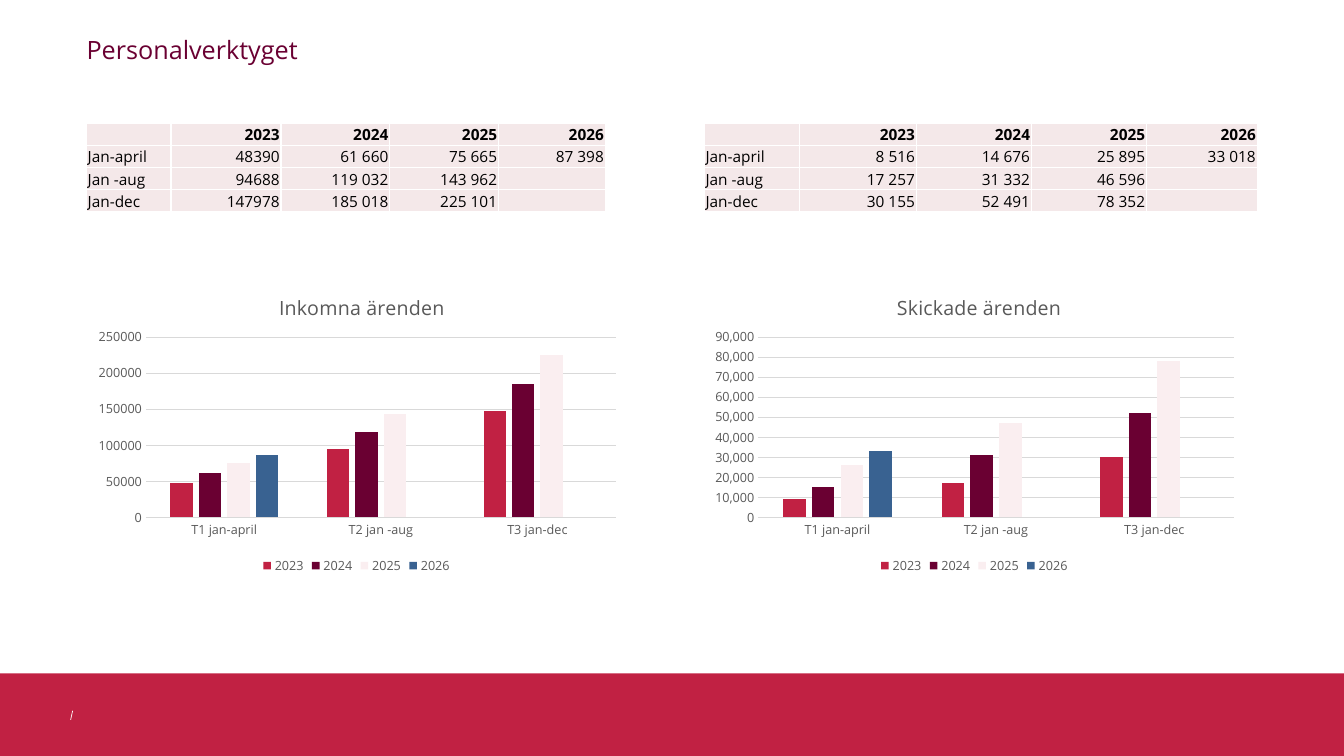
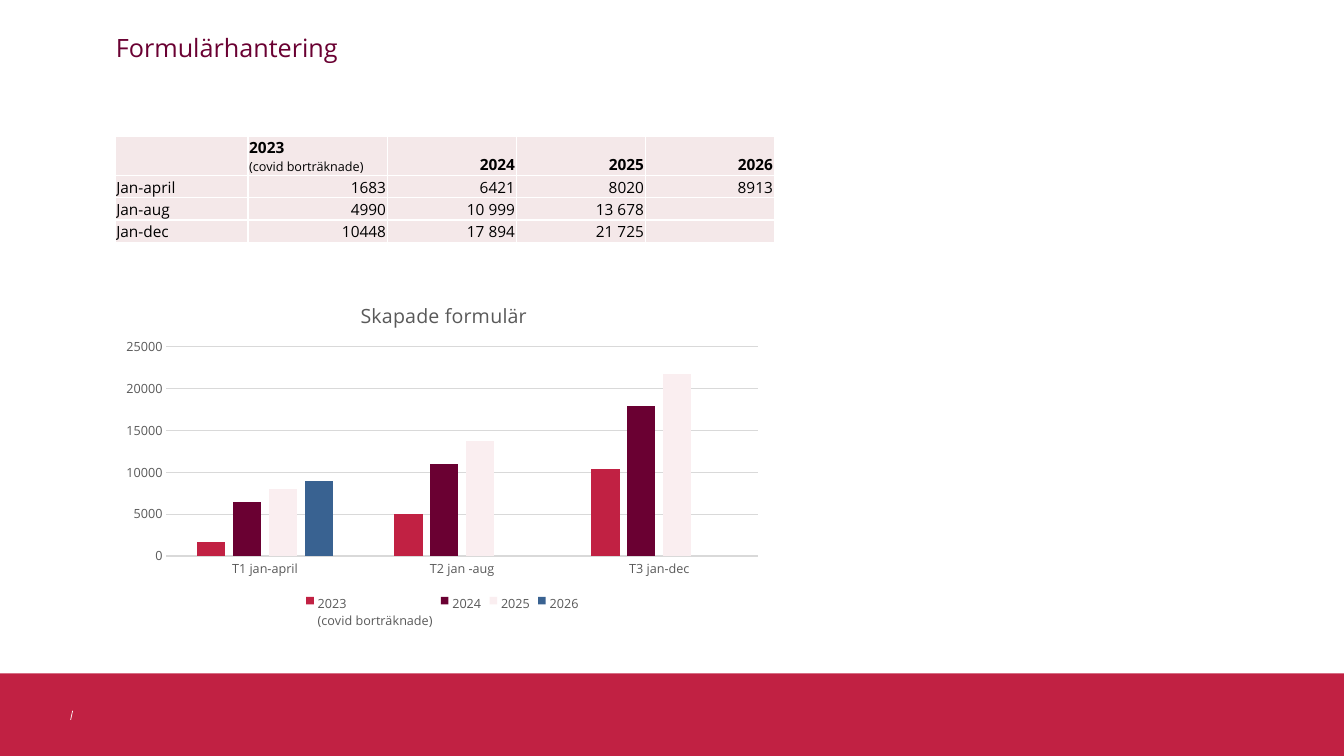
from dataclasses import dataclass

from pptx import Presentation
from pptx.chart.data import CategoryChartData
from pptx.dml.color import RGBColor
from pptx.enum import chart as chart_enum, shapes, text
from pptx.oxml import parse_xml
from pptx.oxml.ns import nsdecls, qn
from pptx.util import Cm, Pt

RED = RGBColor(0xC1, 0x21, 0x43)
WINE = RGBColor(0x6A, 0x00, 0x32)
BLUSH = RGBColor(0xFA, 0xEE, 0xF0)
BLUE = RGBColor(0x39, 0x62, 0x91)
CELL_PINK = RGBColor(0xF4, 0xE8, 0xE9)
GRID_GREY = RGBColor(0xD9, 0xD9, 0xD9)
TEXT_GREY = RGBColor(0x59, 0x59, 0x59)
BLACK = RGBColor(0, 0, 0)
WHITE = RGBColor(0xFF, 0xFF, 0xFF)

FONT = "Open Sans"
SLIDE_WIDTH, SLIDE_HEIGHT = Cm(33.87), Cm(19.05)
BAND_TOP = Cm(16.97)
ROW_HEIGHT = Cm(0.51)
YEARS = ["2023", "2024", "2025", "2026"]
COVID_NOTE = "(covid borträknade)"
COVID_YEARS = [f"2023\n{COVID_NOTE}", *YEARS[1:]]
SERIES_COLORS = [RED, WINE, BLUSH, BLUE]
PERIODS = ["T1 jan-april", "T2 jan -aug", "T3 jan-dec"]


@dataclass
class ChartLayout:
    """Title corner and plot area as shares of the chart's size."""
    title: tuple
    plot: tuple


def style_font(font, size, color, bold=False):
    font.name = FONT
    font.size = Pt(size)
    font.bold = bold
    font.color.rgb = color


def add_run(paragraph, words, size, color, bold=False):
    run = paragraph.add_run()
    run.text = words
    style_font(run.font, size, color, bold)


def add_footer_band(slide, layout):
    """Draw the band and its slash, then move them to the shared layout."""
    band = slide.shapes.add_shape(shapes.MSO_SHAPE.RECTANGLE, 0, BAND_TOP,
                                  SLIDE_WIDTH, SLIDE_HEIGHT - BAND_TOP)
    band.shadow.inherit = False
    band.fill.solid()
    band.fill.fore_color.rgb = RED
    band.line.fill.background()
    slash = slide.shapes.add_connector(shapes.MSO_CONNECTOR.STRAIGHT,
                                       Cm(1.83), Cm(17.91), Cm(1.78), Cm(18.14))
    slash.line.color.rgb = WHITE
    slash.line.width = Pt(0.5)
    slash.element.spPr.append(parse_xml(f"<a:effectLst {nsdecls('a')}/>"))
    for shape in (band, slash):
        layout.shapes.element.append(shape.element)


def set_title(slide, words, left, top, width, height):
    title = slide.shapes.title
    title.left, title.top, title.width, title.height = left, top, width, height
    frame = title.text_frame
    frame.margin_left = frame.margin_top = frame.margin_right = frame.margin_bottom = 0
    frame.vertical_anchor = text.MSO_ANCHOR.TOP
    frame.auto_size = text.MSO_AUTO_SIZE.NONE
    frame.word_wrap = True
    paragraph = frame.paragraphs[0]
    paragraph.alignment = text.PP_ALIGN.LEFT
    add_run(paragraph, words, 18, WINE)


def set_borders(cell):
    properties = cell._tc.get_or_add_tcPr()
    for index, side in enumerate(("lnL", "lnR", "lnT", "lnB")):
        properties.insert(index, parse_xml(
            f'<a:{side} {nsdecls("a")} w="{Pt(1)}"><a:solidFill>'
            f'<a:srgbClr val="{WHITE}"/></a:solidFill></a:{side}>'))


def fill_cell(cell, words, alignment, bold):
    cell.margin_left = cell.margin_right = cell.margin_top = Cm(0.03)
    cell.margin_bottom = 0
    cell.vertical_anchor = text.MSO_ANCHOR.BOTTOM
    cell.fill.solid()
    cell.fill.fore_color.rgb = CELL_PINK
    set_borders(cell)
    frame = cell.text_frame
    paragraph = frame.paragraphs[0]
    if not words:
        paragraph._p.append(parse_xml(f'<a:endParaRPr {nsdecls("a")} sz="1100"/>'))
        return
    heading, _, note = words.partition("\n")
    paragraph.alignment = text.PP_ALIGN.LEFT if note else alignment
    add_run(paragraph, heading, 11, BLACK, bold)
    if note:
        add_run(frame.add_paragraph(), note, 9, BLACK)


def add_data_table(slide, left, top, widths, rows, header_height=ROW_HEIGHT):
    """Add a table; widths are in centimetres."""
    heights = [header_height] + [ROW_HEIGHT] * (len(rows) - 1)
    table = slide.shapes.add_table(len(rows), len(widths), left, top,
                                   Cm(sum(widths)), sum(heights)).table
    table.first_row = table.horz_banding = False
    for column, width in zip(table.columns, widths):
        column.width = Cm(width)
    for row_index, (row, height) in enumerate(zip(rows, heights)):
        table.rows[row_index].height = height
        for column_index, words in enumerate(row):
            alignment = text.PP_ALIGN.RIGHT if column_index else text.PP_ALIGN.LEFT
            fill_cell(table.cell(row_index, column_index), words, alignment,
                      bold=row_index == 0)


def place_chart_part(part, index, target, **shares):
    """Give a chart part a manual layout, inserted as child number index."""
    for old in part.findall(qn("c:layout")):
        part.remove(old)
    inner = '<c:layoutTarget val="inner"/>' if target else ""
    modes = "".join(f'<c:{axis}Mode val="edge"/>' for axis in "xy")
    values = "".join(f'<c:{name} val="{share}"/>' for name, share in shares.items())
    part.insert(index, parse_xml(
        f'<c:layout {nsdecls("c")}><c:manualLayout>{inner}{modes}{values}'
        '</c:manualLayout></c:layout>'))


def style_axes(chart, number_format):
    for axis in (chart.category_axis, chart.value_axis):
        axis.major_tick_mark = axis.minor_tick_mark = chart_enum.XL_TICK_MARK.NONE
        style_font(axis.tick_labels.font, 9, TEXT_GREY)
    value_axis = chart.value_axis
    value_axis.tick_labels.number_format = number_format
    value_axis.tick_labels.number_format_is_linked = False
    value_axis.format.line.fill.background()
    value_axis.has_major_gridlines = True
    for line in (chart.category_axis.format.line, value_axis.major_gridlines.format.line):
        line.color.rgb = GRID_GREY
        line.width = Pt(0.75)


def add_column_chart(slide, title, box, names, values, chart_layout, number_format="0"):
    data = CategoryChartData()
    data.categories = PERIODS
    for name, numbers in zip(names, values):
        data.add_series(name, numbers)
    chart = slide.shapes.add_chart(chart_enum.XL_CHART_TYPE.COLUMN_CLUSTERED,
                                   *box, data).chart
    style_font(chart.font, 10, BLACK)
    chart.has_title = True
    add_run(chart.chart_title.text_frame.paragraphs[0], title, 14, TEXT_GREY)
    chart.has_legend = True
    chart.legend.position = chart_enum.XL_LEGEND_POSITION.BOTTOM
    chart.legend.include_in_layout = False
    style_font(chart.legend.font, 9, TEXT_GREY)
    style_axes(chart, number_format)
    plot = chart.plots[0]
    plot.gap_width, plot.overlap = 219, -27
    plot.vary_by_categories = False
    for series, color in zip(plot.series, SERIES_COLORS):
        series.format.fill.solid()
        series.format.fill.fore_color.rgb = color
        series.invert_if_negative = False
    place_chart_part(chart.element.xpath("c:chart/c:title")[0], 1, False,
                     **dict(zip("xy", chart_layout.title)))
    place_chart_part(chart.element.xpath("c:chart/c:plotArea")[0], 0, True,
                     **dict(zip("xywh", chart_layout.plot)))


def build_staff_tool_slide(slide):
    left, right = Cm(2.18), Cm(17.75)
    table_top, chart_top = Cm(3.1), Cm(6.88)
    chart_size = Cm(13.61), Cm(7.7)
    set_title(slide, "Personalverktyget", left, Cm(0.86), Cm(13.08), Cm(1.37))
    add_column_chart(
        slide, "Inkomna ärenden", (left, chart_top, *chart_size), YEARS,
        [(48000, 95000, 148000), (62000, 119000, 185000),
         (76000, 144000, 225000), (87000, None, None)],
        ChartLayout((0.35, 0.05), (0.11, 0.21, 0.87, 0.59)))
    add_column_chart(
        slide, "Skickade ärenden", (right, chart_top, *chart_size), YEARS,
        [(9000, 17000, 30000), (15000, 31000, 52000),
         (26000, 47000, 78000), (33000, None, None)],
        ChartLayout((0.35, 0.05), (0.1, 0.21, 0.88, 0.59)), "#,##0")
    add_data_table(slide, left, table_top, [2.13, 2.77, 2.74, 2.74, 2.69], [
        ["", *YEARS],
        ["Jan-april", "48390", "61 660", "75 665", "87 398"],
        ["Jan -aug", "94688", "119 032", "143 962", ""],
        ["Jan-dec", "147978", "185 018", "225 101", ""]])
    add_data_table(slide, right, table_top, [2.39, 2.95, 2.9, 2.9, 2.79], [
        ["", *YEARS],
        ["Jan-april", "8 516", "14 676", "25 895", "33 018"],
        ["Jan -aug", "17 257", "31 332", "46 596", ""],
        ["Jan-dec", "30 155", "52 491", "78 352", ""]])


def build_forms_slide(slide):
    set_title(slide, "Formulärhantering", Cm(2.92), Cm(0.81), Cm(14), Cm(1.63))
    add_column_chart(
        slide, "Skapade formulär", (Cm(2.87), Cm(7.04), Cm(16.56), Cm(8.94)), COVID_YEARS,
        [(1700, 5000, 10400), (6400, 11000, 17900),
         (8000, 13700, 21700), (8900, None, None)],
        ChartLayout((0.37, 0.05), (0.08, 0.19, 0.9, 0.59)))
    add_data_table(slide, Cm(2.9), Cm(3.43), [3.35, 3.51, 3.25, 3.25, 3.25], [
        ["", *COVID_YEARS],
        ["Jan-april", "1683", "6421", "8020", "8913"],
        ["Jan-aug", "4990", "10 999", "13 678", ""],
        ["Jan-dec", "10448", "17 894", "21 725", ""]], Cm(0.97))


def main():
    presentation = Presentation()
    presentation.slide_width, presentation.slide_height = SLIDE_WIDTH, SLIDE_HEIGHT
    layout = presentation.slide_layouts.get_by_name("Title Only")
    staff_tool_slide, forms_slide = (presentation.slides.add_slide(layout) for _ in range(2))
    add_footer_band(staff_tool_slide, layout)
    build_staff_tool_slide(staff_tool_slide)
    build_forms_slide(forms_slide)
    presentation.save("out.pptx")


if __name__ == "__main__":
    main()
